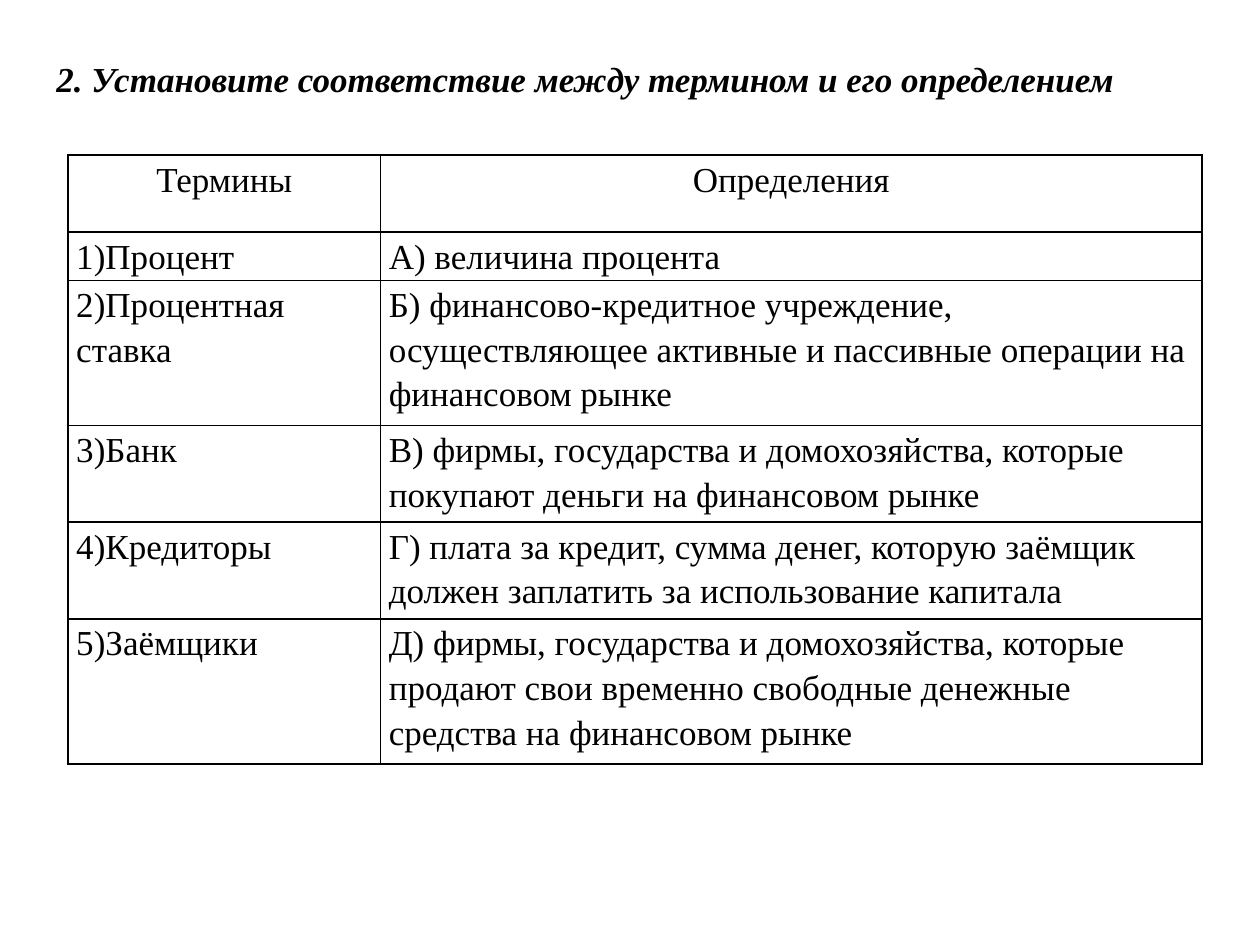
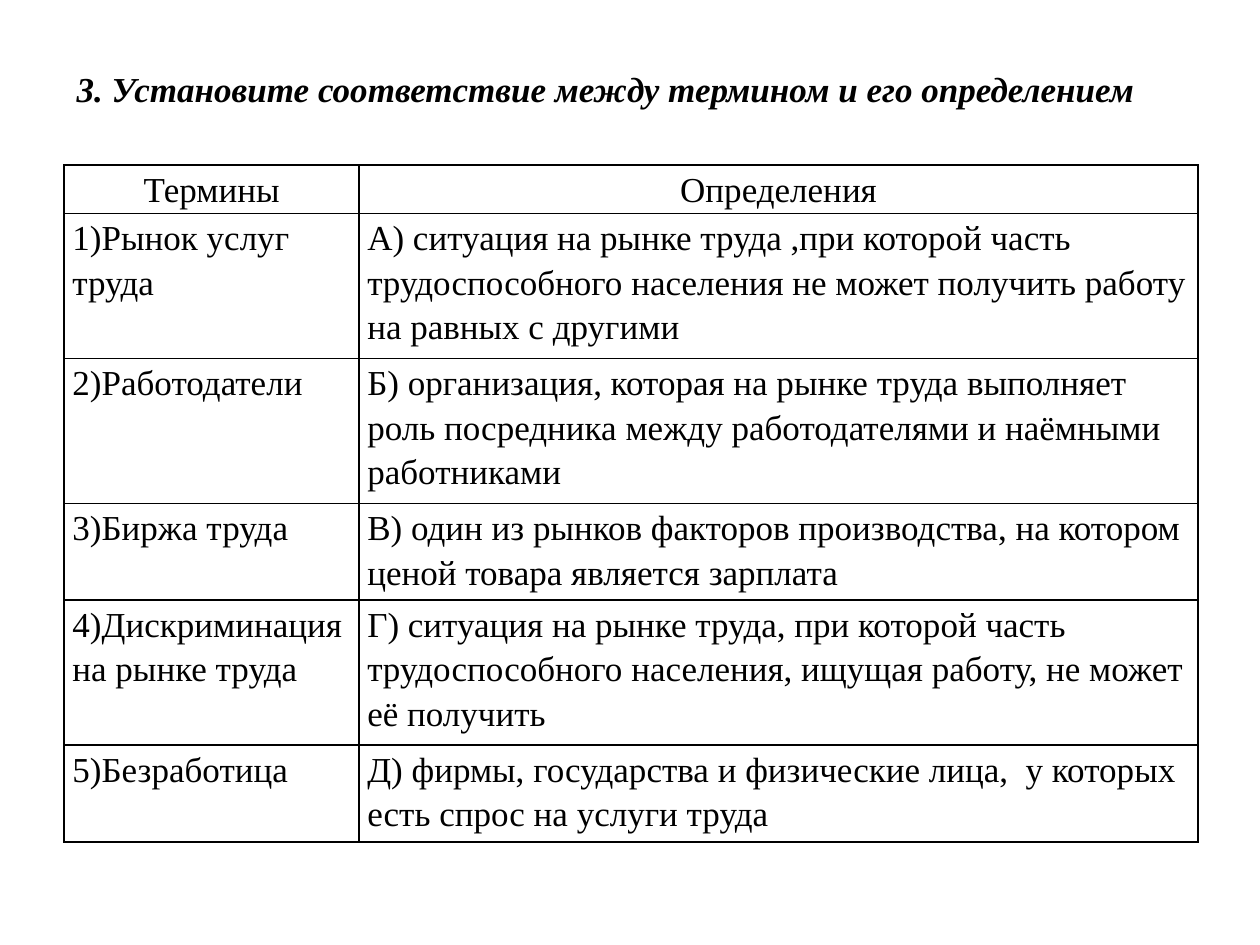
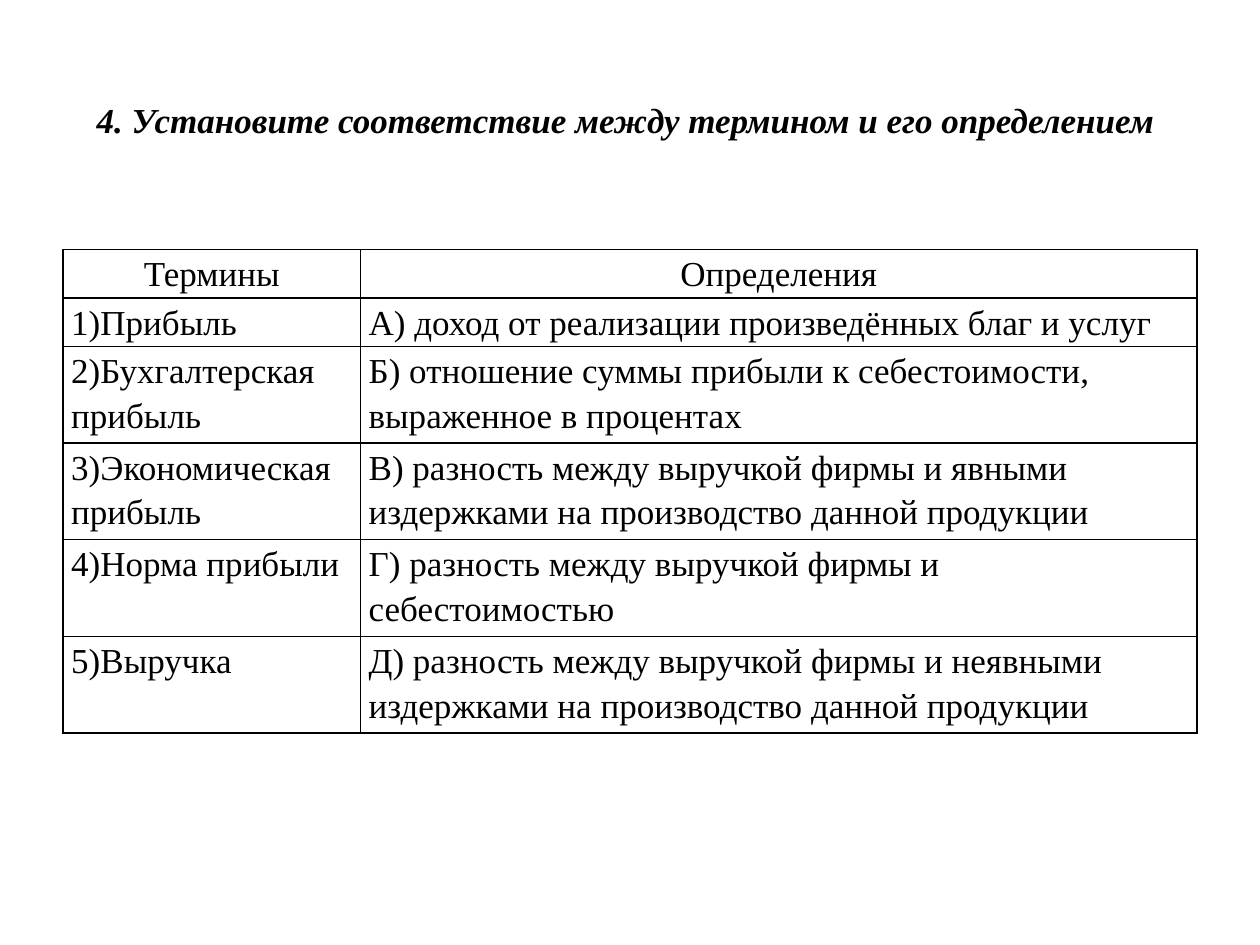
from lxml import etree
from pptx import Presentation
from pptx.dml.color import RGBColor
from pptx.enum import text as t
from pptx.oxml import ns
from pptx.util import Pt

BLACK = RGBColor(0, 0, 0)
WHITE = RGBColor(255, 255, 255)
FONT = "Times New Roman"
TEXT_SIZE = 20
LINE_HEIGHT = 27.6
TABLE_WIDTH = 648
CELL_MARGIN = 4.7
TITLE = "Установите соответствие между термином и его определением"
HEADINGS = ("Термины", "Определения")

CREDIT_TERMS = [
    (1, "1)Процент", "А) величина процента"),
    (3, "2)Процентная ставка",
     "Б) финансово-кредитное учреждение, осуществляющее активные и пассивные операции на финансовом рынке"),
    (2, "3)Банк",
     "В) фирмы, государства и домохозяйства, которые покупают деньги на финансовом рынке"),
    (2, "4)Кредиторы",
     "Г) плата за кредит, сумма денег, которую заёмщик должен заплатить за использование капитала"),
    (3, "5)Заёмщики",
     "Д) фирмы, государства и домохозяйства, которые продают свои временно свободные денежные средства на финансовом рынке"),
]
LABOUR_TERMS = [
    (3, "1)Рынок услуг труда",
     "А) ситуация на рынке труда ,при которой часть трудоспособного населения не может получить работу на равных с другими"),
    (3, "2)Работодатели",
     "Б) организация, которая на рынке труда выполняет роль посредника между работодателями и наёмными работниками"),
    (2, "3)Биржа труда",
     "В) один из рынков факторов производства, на котором ценой товара является зарплата"),
    (3, "4)Дискриминация на рынке труда",
     "Г) ситуация на рынке труда, при которой часть трудоспособного населения, ищущая работу, не может её получить"),
    (2, "5)Безработица",
     "Д) фирмы, государства и физические лица,  у которых есть спрос на услуги труда"),
]
PROFIT_TERMS = [
    (1, "1)Прибыль", "А) доход от реализации произведённых благ и услуг"),
    (2, "2)Бухгалтерская прибыль",
     "Б) отношение суммы прибыли к себестоимости, выраженное в процентах"),
    (2, "3)Экономическая прибыль",
     "В) разность между выручкой фирмы и явными издержками на производство данной продукции"),
    (2, "4)Норма прибыли",
     "Г) разность между выручкой фирмы и себестоимостью"),
    (2, "5)Выручка",
     "Д) разность между выручкой фирмы и неявными издержками на производство данной продукции"),
]


def write_text(frame, words, align=t.PP_ALIGN.LEFT, emphasis=False):
    para = frame.paragraphs[0]
    para.alignment = align
    para.line_spacing = 1.15
    para.space_after = Pt(10)
    span = para.add_run()
    span.text = words
    span.font.name = FONT
    span.font.size = Pt(TEXT_SIZE)
    span.font.color.rgb = BLACK
    span.font.bold = emphasis
    span.font.italic = emphasis


def add_title(page, number, left, top, width):
    box = page.shapes.add_textbox(Pt(left), Pt(top), Pt(width), Pt(33))
    box.text_frame.word_wrap = True
    box.text_frame.auto_size = t.MSO_AUTO_SIZE.SHAPE_TO_FIT_TEXT
    write_text(box.text_frame, f"{number}. {TITLE}", emphasis=True)


def add_borders(cell):
    properties = cell._tc.get_or_add_tcPr()
    for index, side in enumerate(("lnL", "lnR", "lnT", "lnB")):
        line = etree.Element(ns.qn(f"a:{side}"), w=str(Pt(1)))
        fill = etree.SubElement(line, ns.qn("a:solidFill"))
        etree.SubElement(fill, ns.qn("a:srgbClr"), val=str(BLACK))
        properties.insert(index, line)


def fill_cell(cell, words, align):
    cell.margin_left = cell.margin_right = Pt(CELL_MARGIN)
    cell.margin_top = cell.margin_bottom = 0
    cell.fill.solid()
    cell.fill.fore_color.rgb = WHITE
    add_borders(cell)
    write_text(cell.text_frame, words, align)


def add_matching_table(page, left, top, term_width, terms, header_height=LINE_HEIGHT):
    heights = [header_height] + [lines * LINE_HEIGHT for lines, _, _ in terms]
    rows = [HEADINGS] + [pair for _, *pair in terms]
    table = page.shapes.add_table(len(rows), 2, Pt(left), Pt(top),
                                  Pt(TABLE_WIDTH), Pt(sum(heights))).table
    table.first_row = False
    table.horz_banding = False
    table.columns[0].width = Pt(term_width)
    table.columns[1].width = Pt(TABLE_WIDTH - term_width)
    for index, (height, row) in enumerate(zip(heights, rows)):
        table.rows[index].height = Pt(height)
        align = t.PP_ALIGN.LEFT if index else t.PP_ALIGN.CENTER
        for column, words in enumerate(row):
            fill_cell(table.cell(index, column), words, align)


def add_page(deck):
    page = deck.slides.add_slide(deck.slide_layouts[6])
    page.background.fill.solid()
    page.background.fill.fore_color.rgb = WHITE
    return page


def main():
    deck = Presentation()
    deck.slide_width, deck.slide_height = Pt(720), Pt(540)

    page = add_page(deck)
    add_title(page, 2, 25.2, 26, 674.6)
    add_matching_table(page, 38.9, 88.6, 178.6, CREDIT_TERMS, header_height=44)

    page = add_page(deck)
    add_title(page, 3, 36.7, 31.7, 657.4)
    add_matching_table(page, 36.7, 94.3, 168.5, LABOUR_TERMS)

    page = add_page(deck)
    add_title(page, 4, 48.2, 49, 646.6)
    add_matching_table(page, 36, 142.6, 170, PROFIT_TERMS)

    deck.save("out.pptx")


if __name__ == "__main__":
    main()
